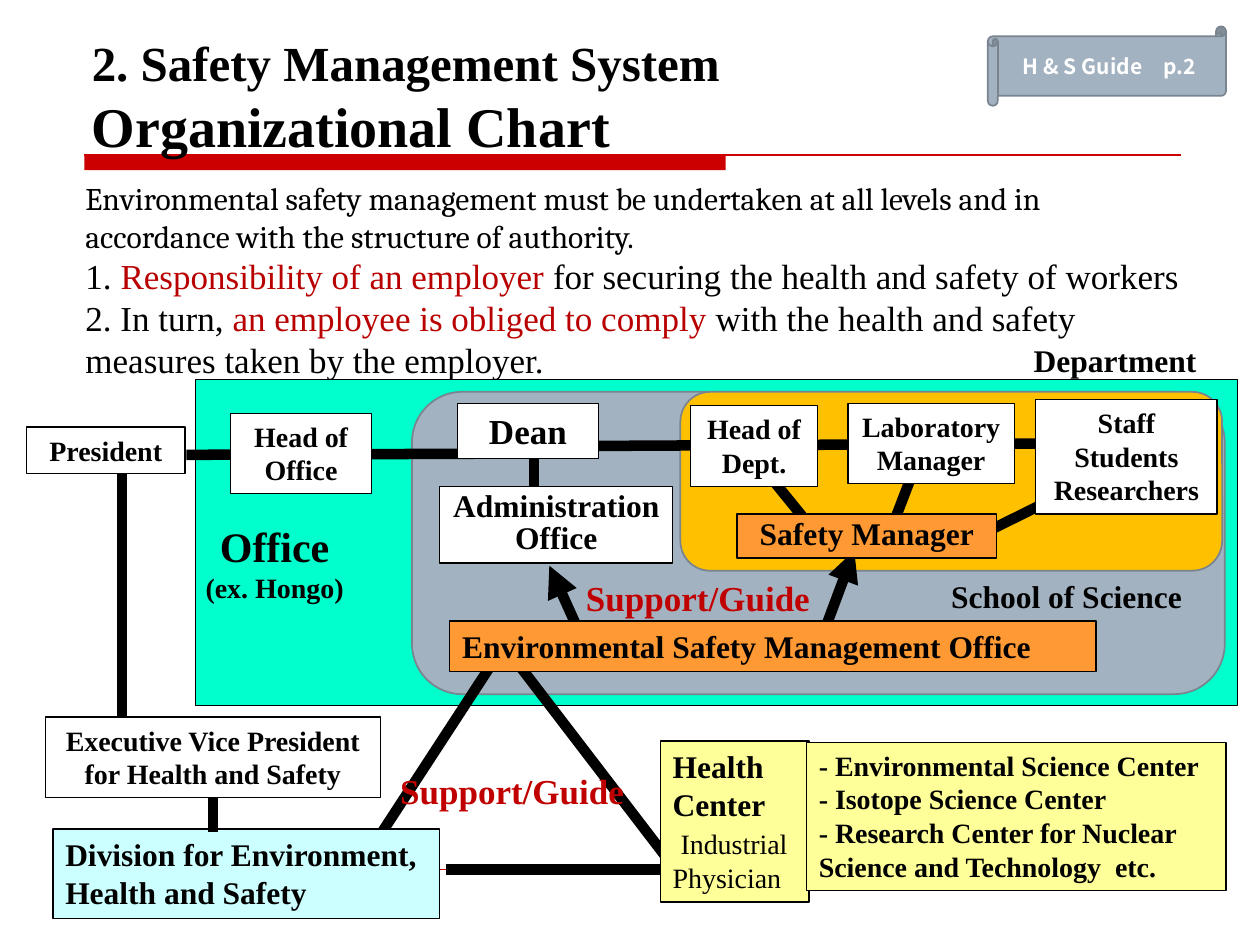
from lxml import etree
from pptx import Presentation
from pptx.dml.color import RGBColor
from pptx.enum.shapes import MSO_CONNECTOR, MSO_SHAPE
from pptx.enum.text import MSO_ANCHOR, PP_ALIGN
from pptx.oxml.ns import qn
from pptx.util import Inches, Pt

RECT, ROUND, SCROLL = MSO_SHAPE.RECTANGLE, MSO_SHAPE.ROUNDED_RECTANGLE, MSO_SHAPE.HORIZONTAL_SCROLL
STRAIGHT = MSO_CONNECTOR.STRAIGHT
TOP, MIDDLE, BOTTOM = MSO_ANCHOR.TOP, MSO_ANCHOR.MIDDLE, MSO_ANCHOR.BOTTOM
LEFT, CENTER = PP_ALIGN.LEFT, PP_ALIGN.CENTER

BLACK = RGBColor(0x00, 0x00, 0x00)
WHITE = RGBColor(0xFF, 0xFF, 0xFF)
RULE_RED = RGBColor(0xCC, 0x00, 0x00)
TEXT_RED = RGBColor(0xB9, 0x00, 0x00)
SUPPORT_RED = RGBColor(0xC0, 0x00, 0x00)
GREY = RGBColor(0xA3, 0xB2, 0xC1)
GREY_EDGE = RGBColor(0x79, 0x84, 0x8F)
TEAL = RGBColor(0x00, 0xFF, 0xCC)
GOLD = RGBColor(0xFF, 0xC0, 0x00)
ORANGE = RGBColor(0xFF, 0x99, 0x33)
YELLOW = RGBColor(0xFF, 0xFF, 0x99)
PALE_BLUE = RGBColor(0xCC, 0xFF, 0xFF)
SERIF = "Times New Roman"


def run(text, size, color=BLACK, bold=True, font=SERIF):
    return text, size, color, bold, font


def write(shape, paragraphs, align=LEFT, anchor=TOP, spacing=None):
    """Fill a shape with paragraphs, each a list of runs; "\\n" breaks the line."""
    tf = shape.text_frame
    tf.word_wrap = True
    tf.vertical_anchor = anchor
    for i, runs in enumerate(paragraphs):
        p = tf.add_paragraph() if i else tf.paragraphs[0]
        p.alignment = align
        if spacing:
            p.line_spacing = Pt(spacing)
        for text, size, color, bold, font in runs:
            if text == "\n":
                p.add_line_break()
                continue
            r = p.add_run()
            r.text = text
            r.font.size, r.font.bold, r.font.name = Pt(size), bold, font
            r.font.color.rgb = color


def add_panel(s, origin, box, fill, edge=BLACK, width=0.75, kind=RECT):
    x, y, w, h = box
    sp = s.shapes.add_shape(kind, Inches(origin[0] + x), Inches(origin[1] + y), Inches(w), Inches(h))
    sp.shadow.inherit = False
    sp.fill.solid()
    sp.fill.fore_color.rgb = fill
    if edge is None:
        sp.line.fill.background()
    else:
        sp.line.color.rgb = edge
        sp.line.width = Pt(width)
    return sp


def add_label(s, origin, box, paragraphs, align=LEFT, anchor=TOP):
    x, y, w, h = box
    sp = s.shapes.add_textbox(Inches(origin[0] + x), Inches(origin[1] + y), Inches(w), Inches(h))
    write(sp, paragraphs, align, anchor)


def add_unit(s, origin, box, lines, size=16, fill=WHITE, align=CENTER, spacing=None):
    sp = add_panel(s, origin, box, fill)
    write(sp, [[run(line, size)] for line in lines], align, spacing=spacing)
    return sp


def add_link(s, origin, ends, color=BLACK, width=6, arrow=False):
    x, y = origin
    x1, y1, x2, y2 = ends
    link = s.shapes.add_connector(STRAIGHT, Inches(x + x1), Inches(y + y1), Inches(x + x2), Inches(y + y2))
    link.line.color.rgb = color
    link.line.width = Pt(width)
    if arrow:
        etree.SubElement(link.line._get_or_add_ln(), qn("a:tailEnd"), type="triangle")
    etree.SubElement(link._element.spPr, qn("a:effectLst"))
    return link


def draw_header(s, box):
    x, y, w, h = box
    origin = (x, y)
    # Red rules under the title and at the foot
    add_panel(s, origin, (0, h, 5.09, 0.12), RULE_RED, edge=None)
    add_link(s, origin, (0, h, w, h), RULE_RED, 0.75)
    add_link(s, origin, (0, 6.69, 8.66, 6.69), RULE_RED, 0.25)
    # Title and page marker
    title = [run("2. Safety Management System ", 28), run("\n", 28), run("Organizational Chart", 32)]
    add_label(s, origin, (-0.04, 0.36, 8.75, 0.74), [title], anchor=BOTTOM)
    marker = add_panel(s, origin, (7.17, 0, 1.89, 0.63), GREY, GREY_EDGE, 1, SCROLL)
    write(marker, [[run("H & S Guide　p.2", 12, WHITE, font="Noto Sans CJK JP")]], CENTER, MIDDLE)


def draw_intro(s, box):
    x, y, w, h = box
    add_label(s, (x, y), (0, 0, w, h), [
        [run("Environmental safety management must be undertaken at all levels and in "
             "accordance with the structure of authority.", 18, bold=False, font="Cambria")],
        [run("1. ", 20, bold=False),
         run("Responsibility of an employer ", 20, TEXT_RED, False),
         run("for securing the health and safety of workers", 20, bold=False)],
        [run("2. In turn, ", 20, bold=False),
         run("an employee is obliged to comply ", 20, TEXT_RED, False),
         run("with the health and safety measures taken by the employer.", 20, bold=False)],
    ])


def draw_areas(s, origin):
    # Office, school and department, nested
    add_panel(s, origin, (1.35, 0.01, 8.27, 2.59), TEAL)
    add_panel(s, origin, (3.07, 0.11, 6.45, 2.4), GREY, GREY_EDGE, 1, ROUND)
    add_panel(s, origin, (5.2, 0.11, 4.3, 1.42), GOLD, GREY_EDGE, 1, ROUND)


def draw_links(s, origin):
    # Reporting lines, partly covered by the units
    for ends in [
        (6.12, 3.9, 3.34, 3.9), (8.25, 0.52, 4.41, 0.54), (6.34, 1.31, 5.56, 0.35),
        (3.86, 0.6, 1.28, 0.61), (5.23, 3.99, 3.89, 2.24), (2.79, 3.67, 3.69, 2.29),
        (0.77, 2.69, 0.77, 0.76), (4.04, 0.91, 4.04, 0.63), (6.85, 1.26, 7.08, 0.66),
        (7.29, 1.39, 8.5, 0.79),
    ]:
        add_link(s, origin, ends)
    # Support arrows
    for ends in [(6.3, 2.12, 6.58, 1.37), (4.39, 2, 4.16, 1.49)]:
        add_link(s, origin, ends, arrow=True)


def draw_command(s, origin):
    # Chain of command
    add_unit(s, origin, (0.01, 0.39, 1.26, 0.37), ["President"])
    add_unit(s, origin, (1.63, 0.28, 1.12, 0.64), ["Head of Office"])
    add_unit(s, origin, (3.43, 0.2, 1.12, 0.44), ["Dean"], 20)
    add_unit(s, origin, (5.28, 0.22, 1.01, 0.64), ["Head of Dept."])
    add_unit(s, origin, (6.53, 0.2, 1.32, 0.64), ["Laboratory Manager"])
    # Safety roles
    add_unit(s, origin, (3.29, 0.86, 1.85, 0.61), ["Administration", "Office"], 18, spacing=18)
    add_unit(s, origin, (5.65, 1.08, 2.06, 0.35), ["Safety Manager"], 18, ORANGE, spacing=18)
    add_unit(s, origin, (8.02, 0.17, 1.44, 0.91), ["Staff", "Students", "Researchers"])
    add_unit(s, origin, (3.37, 1.93, 5.13, 0.4), ["Environmental Safety Management Office"], 18, ORANGE, LEFT)
    # Area names
    for box, runs in [
        ((1.28, 1.08, 1.4, 0.77), [run("Office ", 24), run("(ex. Hongo)", 16)]),
        ((7.21, 1.53, 2.11, 0.4), [run("School of Science", 18)]),
        ((7.87, -0.34, 1.56, 0.4), [run("Department", 18)]),
        ((3.72, 1.53, 3.24, 0.44), [run("Support/Guide", 20, SUPPORT_RED)]),
    ]:
        add_label(s, origin, box, [runs], CENTER)


def draw_support(s, origin):
    add_label(s, origin, (2.71, 3.06, 2.31, 0.44), [[run("Support/Guide", 20, SUPPORT_RED)]], CENTER)
    add_unit(s, origin, (0.22, 3.58, 3.07, 0.71), ["Division for Environment, Health and Safety"],
             18, PALE_BLUE, LEFT)
    health = add_panel(s, origin, (5.04, 2.88, 1.18, 1.28), YELLOW)
    write(health, [[run("Health Center", 18)],
                   [run(" ", 18), run("Industrial Physician", 16, bold=False)]])
    vice = add_unit(s, origin, (0.16, 2.69, 2.66, 0.64), ["Executive Vice President for Health and Safety"])
    link = add_link(s, origin, (1.49, 3.33, 1.49, 3.6))
    link.begin_connect(vice, 2)
    add_unit(s, origin, (6.2, 2.89, 3.33, 1.18), [
        "- Environmental Science Center", "- Isotope Science Center",
        "- Research Center for Nuclear  Science and Technology  etc."], fill=YELLOW, align=LEFT)


def main():
    prs = Presentation()
    prs.slide_width, prs.slide_height = Inches(10), Inches(7.5)
    s = prs.slides.add_slide(prs.slide_layouts[6])
    draw_header(s, (0.67, 0.21, 8.7, 1.02))
    draw_intro(s, (0.58, 1.37, 8.91, 1.72))
    chart = (0.2, 3)
    for draw in (draw_areas, draw_links, draw_command, draw_support):
        draw(s, chart)
    prs.save("out.pptx")


if __name__ == "__main__":
    main()
